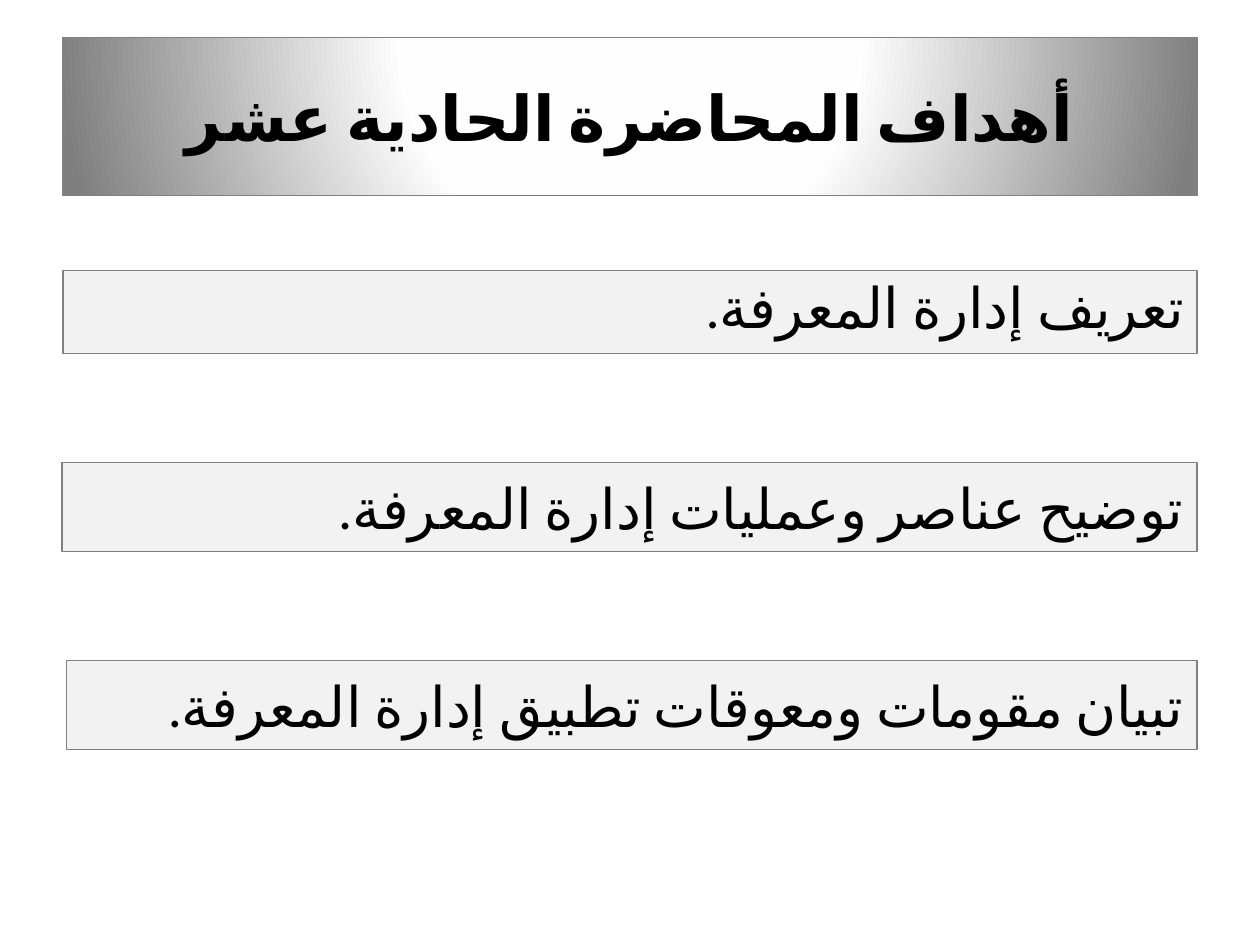
from dataclasses import dataclass

from lxml import etree
from pptx import Presentation
from pptx.dml.color import RGBColor
from pptx.enum.lang import MSO_LANGUAGE_ID
from pptx.enum.shapes import MSO_SHAPE
from pptx.enum.text import MSO_ANCHOR, PP_ALIGN
from pptx.oxml import parse_xml
from pptx.oxml.ns import qn
from pptx.util import Pt

RECTANGLE = MSO_SHAPE.RECTANGLE
TOP, MIDDLE = MSO_ANCHOR.TOP, MSO_ANCHOR.MIDDLE
CENTER, JUSTIFY = PP_ALIGN.CENTER, PP_ALIGN.JUSTIFY
ARABIC = MSO_LANGUAGE_ID.ARABIC


@dataclass(frozen=True)
class Theme:
    font: str = "Calibri"
    ink: str = "000000"
    border: str = "808080"
    panel: str = "F2F2F2"
    gradient: tuple = ((0, "FFFFFF"), (40, "FEFEFE"), (100, "7F7F7F"))
    title_size: int = 36
    goal_size: int = 32
    border_width: float = 0.75


THEME = Theme()
RIGHT_EDGE = 684


def add_panel(page, left, top, height, text, size, bold, anchor, align):
    """Add a bordered panel reaching the right margin, with one line of text."""
    box = page.shapes.add_shape(
        RECTANGLE, Pt(left), Pt(top), Pt(RIGHT_EDGE - left), Pt(height))
    box.shadow.inherit = False
    box.fill.solid()
    box.fill.fore_color.rgb = RGBColor.from_string(THEME.panel)
    box.line.color.rgb = RGBColor.from_string(THEME.border)
    box.line.width = Pt(THEME.border_width)
    frame = box.text_frame
    frame.word_wrap = True
    frame.vertical_anchor = anchor
    para = frame.paragraphs[0]
    para.alignment = align
    para.space_before = Pt(0)
    span = para.add_run()
    span.text = text
    span.font.name = THEME.font
    span.font.size = Pt(size)
    span.font.bold = bold
    span.font.language_id = ARABIC
    span.font.color.rgb = RGBColor.from_string(THEME.ink)
    # Arabic letters take the complex-script font
    etree.SubElement(span.font._element, qn("a:cs"), typeface=THEME.font)
    return box, para


deck = Presentation()
deck.slide_width, deck.slide_height = Pt(720), Pt(540)
page = deck.slides.add_slide(deck.slide_layouts[6])

# Title banner with a radial gradient centred above it
banner, heading = add_panel(page, 36, 21.6, 90, "أهداف المحاضرة الحادية عشر",
                            THEME.title_size, True, MIDDLE, CENTER)
stops = "".join(
    f'<a:gs pos="{position * 1000}"><a:srgbClr val="{color}"/></a:gs>'
    for position, color in THEME.gradient)
gradient = parse_xml(
    '<a:gradFill xmlns:a="http://schemas.openxmlformats.org/drawingml/2006/main" '
    f'rotWithShape="1"><a:gsLst>{stops}</a:gsLst><a:path path="circle">'
    '<a:fillToRect l="50000" t="-80000" r="50000" b="180000"/></a:path></a:gradFill>')
solid = banner._element.spPr.find(qn("a:solidFill"))
solid.getparent().replace(solid, gradient)

# Lecture goals: left, top, height, line spacing, text
goals = [
    (36, 154.5, 47.5, 0.97, "تعريف إدارة المعرفة."),
    (35.5, 264.2, 51, 1.07, "توضيح عناصر وعمليات إدارة المعرفة."),
    (38, 377.5, 51, 1.07, "تبيان مقومات ومعوقات تطبيق إدارة المعرفة."),
]
for left, top, height, spacing, text in goals:
    box, para = add_panel(page, left, top, height, text,
                          THEME.goal_size, False, TOP, JUSTIFY)
    para.line_spacing = spacing
    para._p.get_or_add_pPr().set("rtl", "1")

deck.save("out.pptx")
